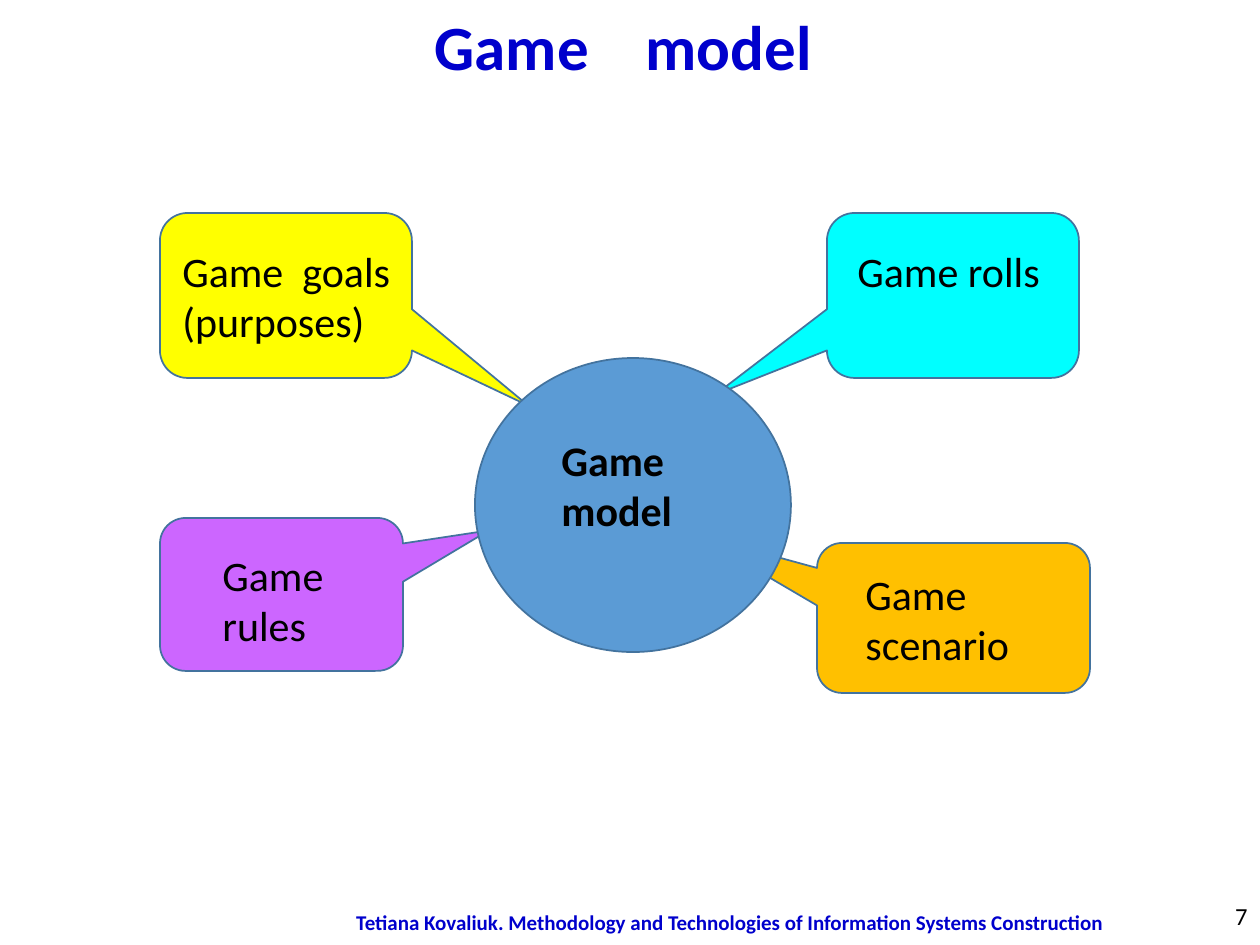
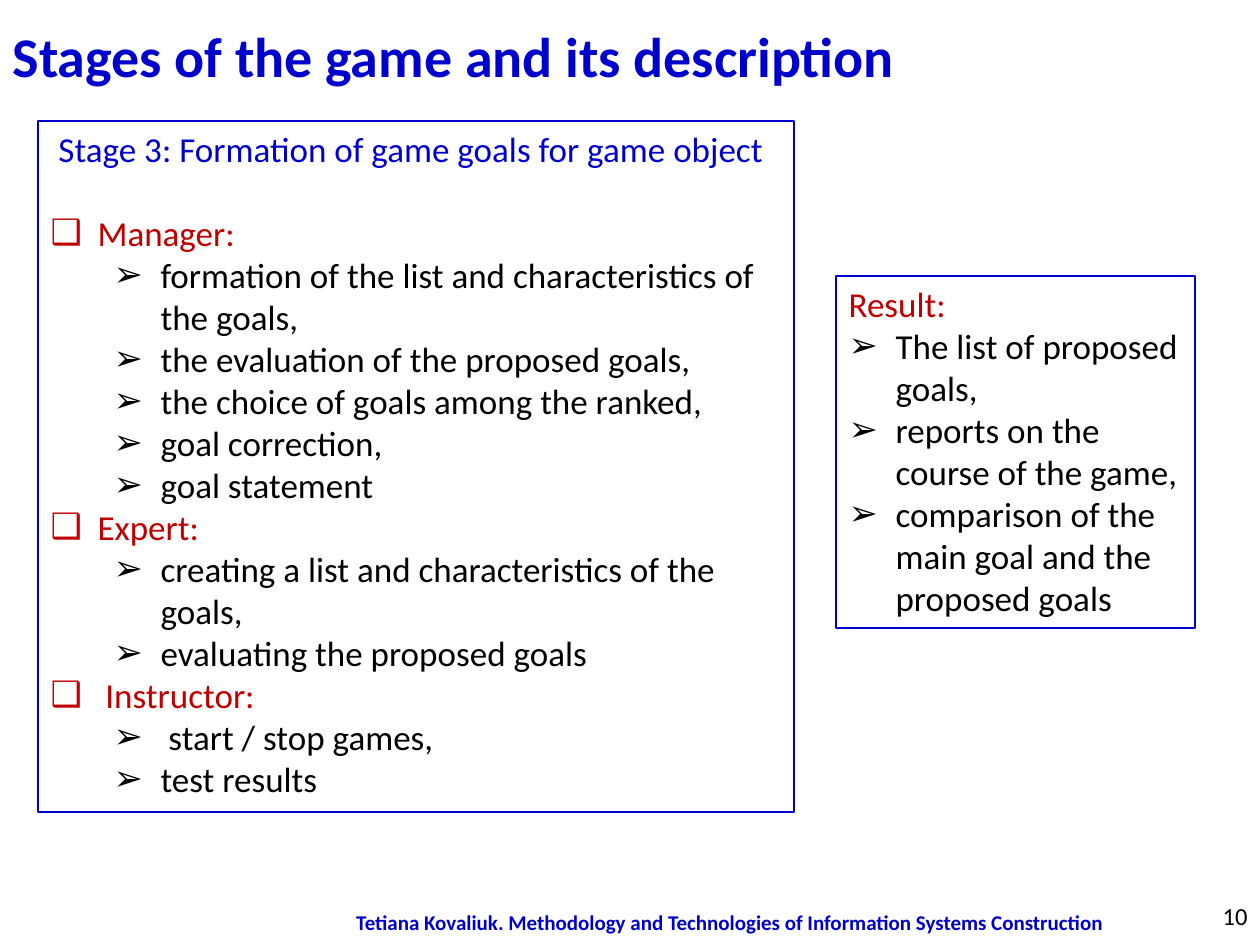
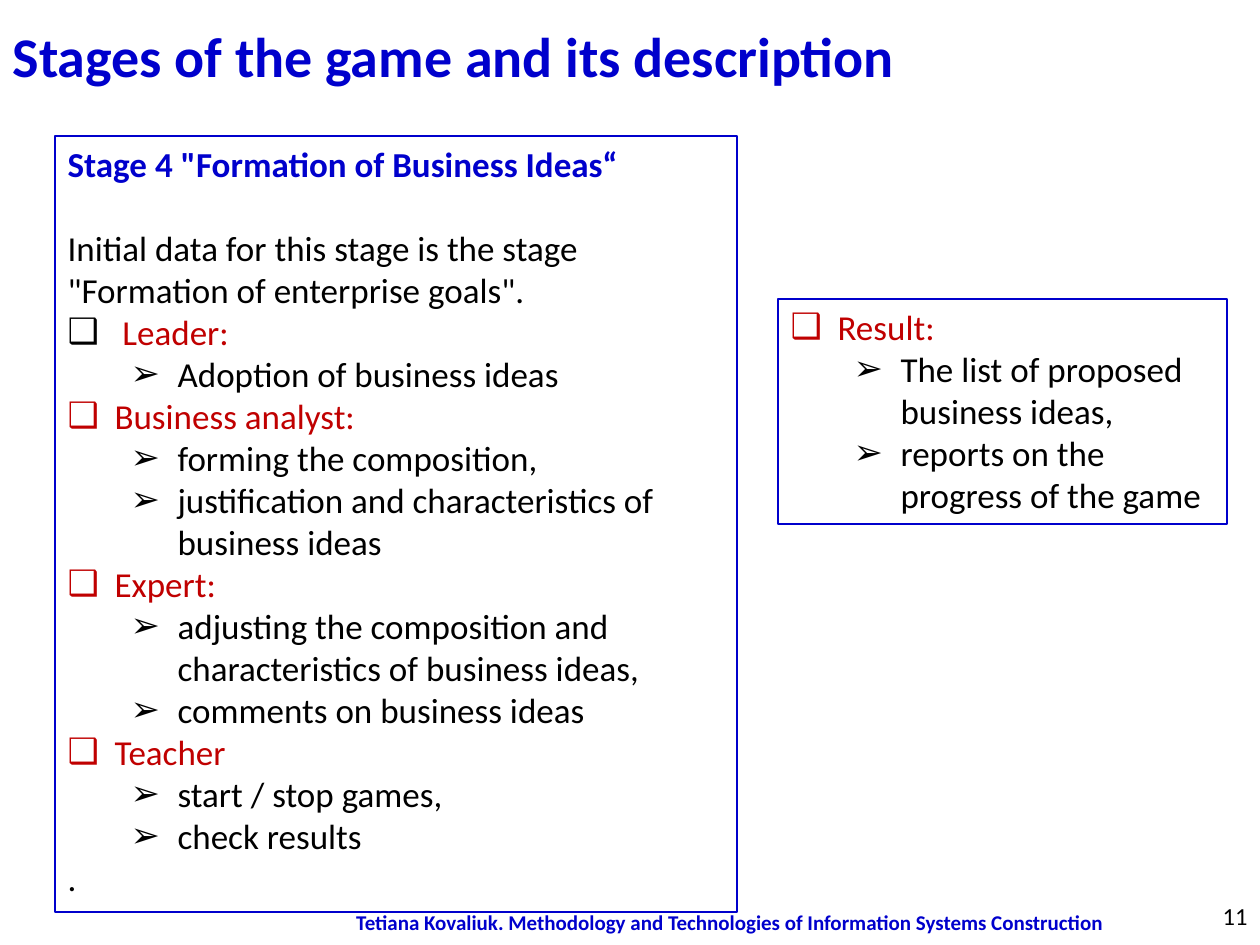
from lxml import etree
from pptx import Presentation
from pptx.dml.color import RGBColor
from pptx.enum.shapes import MSO_SHAPE
from pptx.enum.text import MSO_ANCHOR, MSO_AUTO_SIZE, PP_ALIGN
from pptx.oxml.ns import qn
from pptx.util import Pt

CALL = MSO_SHAPE.ROUNDED_RECTANGULAR_CALLOUT
OVAL = MSO_SHAPE.OVAL
TOP, MID = MSO_ANCHOR.TOP, MSO_ANCHOR.MIDDLE
FIXED = MSO_AUTO_SIZE.NONE
LEFT, MIDST, RIGHT = PP_ALIGN.LEFT, PP_ALIGN.CENTER, PP_ALIGN.RIGHT

BLUE = RGBColor(0x00, 0x00, 0xCC)
RED = RGBColor(0xC0, 0x00, 0x00)
BLACK = RGBColor(0x00, 0x00, 0x00)
EDGE = RGBColor(0x43, 0x73, 0x9E)
DISC = RGBColor(0x5B, 0x9B, 0xD5)
PURPLE = RGBColor(0xCC, 0x66, 0xFF)
ORANGE = RGBColor(0xFF, 0xC0, 0x00)
CYAN = RGBColor(0x00, 0xFF, 0xFF)
YELLOW = RGBColor(0xFF, 0xFF, 0x00)

FONT = "Calibri"
SCALE = 914400 / 126
HANG = 47
CREDIT = "Tetiana Kovaliuk. Methodology and Technologies of Information Systems Construction"

STYLES = {
    "stage": dict(color=BLUE, after=24),
    "strong": dict(color=BLUE, bold=True, after=24),
    "plain": dict(),
    "label": dict(color=RED),
    "role": dict(color=RED, mark="❑", left=HANG),
    "lead": dict(color=RED, mark="❑", left=HANG, tint=BLACK),
    "task": dict(mark="➢", left=110, level=1),
    "point": dict(mark="➢", left=HANG),
}

NODES = [
    ((160, 518, 243, 153), (0.853, -0.418), PURPLE, (50, 25, 142, 115), "Game rules", 0),
    ((817, 543, 273, 150), (-0.939, -0.552), ORANGE, (36, 19, 221, 115), "Game scenario", 0),
    ((827, 213, 252, 165), (-0.942, 0.6), CYAN, (18, 26, 236, 63), "Game rolls", 0),
    ((160, 213, 252, 165), (0.962, 0.668), YELLOW, (10, 26, 237, 115),
     "Game goals (purposes)", 5.4),
]

STAGES = [
    (10, (38, 121, 756, 691), [
        ("stage", " Stage 3: Formation of game goals for game object"),
        ("role", "Manager:"),
        ("task", "formation of the list and characteristics of the goals,"),
        ("task", "the evaluation of the proposed goals,"),
        ("task", "the choice of goals among the ranked,"),
        ("task", "goal correction,"),
        ("task", "goal statement"),
        ("role", "Expert:"),
        ("task", "creating a list and characteristics of the goals,"),
        ("task", "evaluating the proposed goals"),
        ("role", " Instructor:"),
        ("task", " start / stop games,"),
        ("task", "test results"),
    ], (836, 276, 359, 352), [
        ("label", "Result:"),
        ("point", "The list of proposed goals,"),
        ("point", "reports on the course of the game,"),
        ("point", "comparison of the main goal and the proposed goals"),
    ]),
    (11, (55, 136, 682, 776), [
        ("strong", 'Stage 4 "Formation of Business Ideas“'),
        ("plain", 'Initial data for this stage is the stage "Formation of enterprise goals".'),
        ("lead", " Leader:"),
        ("task", "Adoption of business ideas"),
        ("role", "Business analyst:"),
        ("task", "forming the composition,"),
        ("task", "justification and characteristics of business ideas"),
        ("role", "Expert:"),
        ("task", "adjusting the composition and characteristics of business ideas,"),
        ("task", "comments on business ideas"),
        ("role", "Teacher"),
        ("task", "start / stop games,"),
        ("task", "check results"),
        ("plain", "."),
    ], (778, 299, 449, 225), [
        ("role", "Result:"),
        ("task", "The list of proposed business ideas,"),
        ("task", "reports on the progress of the game"),
    ]),
]


def px(n):
    return round(n * SCALE)


def place(shape, box):
    shape.left, shape.top, shape.width, shape.height = map(px, box)


def say(frame, text, size=20, color=BLACK, bold=False, align=LEFT, after=0,
        mark=None, tint=None, left=0, level=0, gap=0):
    para = frame.add_paragraph() if frame.text else frame.paragraphs[0]
    props = para._p.get_or_add_pPr()
    props.set("marL", str(px(left)))
    props.set("indent", str(-px(HANG) if mark else 0))
    if mark:
        hue = etree.SubElement(props, qn("a:buClr"))
        etree.SubElement(hue, qn("a:srgbClr"), val=str(tint or color))
        etree.SubElement(props, qn("a:buFont"), typeface=FONT)
        etree.SubElement(props, qn("a:buChar"), char=mark)
    else:
        etree.SubElement(props, qn("a:buNone"))
    para.level = level
    para.alignment = align
    para.space_before = Pt(0)
    para.space_after = Pt(after)
    for part in text.partition(" ") if gap else [text]:
        run = para.add_run()
        run.text = part
        font = run.font
        font.name, font.size, font.bold = FONT, Pt(size), bold
        font.color.rgb = color
        if part == " ":
            run._r.get_or_add_rPr().set("spc", str(round(gap * 100)))


def setup(frame, anchor=TOP):
    frame.word_wrap = True
    frame.auto_size = FIXED
    frame.vertical_anchor = anchor
    return frame


def note(slide, box, text, anchor=TOP, **style):
    area = slide.shapes.add_textbox(*map(px, box))
    say(setup(area.text_frame, anchor), text, **style)


def start(deck, layout, page, text, box, **style):
    slide = deck.slides.add_slide(deck.slide_layouts[layout])
    title = slide.shapes.title
    place(title, box)
    say(setup(title.text_frame), text, color=BLUE, bold=True, **style)
    note(slide, (318, 897, 824, 50), CREDIT, MID, size=12, color=BLUE, bold=True, align=MIDST)
    note(slide, (1196, 891, 64, 50), str(page), MID, size=14, align=RIGHT)
    return slide


def node(slide, kind, box, fill, inner, text, **style):
    shape = slide.shapes.add_shape(kind, *map(px, box))
    shape.shadow.inherit = False
    shape.fill.solid()
    shape.fill.fore_color.rgb = fill
    shape.line.color.rgb = EDGE
    shape.line.width = Pt(1)
    x, y, wide, high = inner
    note(slide, (box[0] + x, box[1] + y, wide, high), text, size=24, **style)
    return shape


def panel(holder, box, rows):
    place(holder, box)
    holder.line.color.rgb = BLUE
    holder.line.width = Pt(0.75)
    frame = setup(holder.text_frame)
    for kind, text in rows:
        say(frame, text, **STYLES[kind])


def model(deck):
    slide = start(deck, 5, 7, "Game model", (422, 1, 420, 90), size=36, gap=24.4)
    for box, tip, fill, inner, text, gap in NODES:
        shape = node(slide, CALL, box, fill, inner, text, gap=gap)
        for i, value in enumerate((*tip, 0.167)):
            shape.adjustments[i] = value
    node(slide, OVAL, (475, 358, 316, 294), DISC, (74, 70, 204, 115), "Game model", bold=True)


def stage(deck, page, box, rows, side, result):
    slide = start(deck, 3, page, "Stages of the game and its description",
                  (0, 15, 982, 81), size=32)
    panel(slide.placeholders[1], box, rows)
    panel(slide.placeholders[2], side, result)


def main():
    deck = Presentation()
    deck.slide_width, deck.slide_height = px(1260), px(945)
    model(deck)
    for item in STAGES:
        stage(deck, *item)
    deck.save("out.pptx")


if __name__ == "__main__":
    main()
